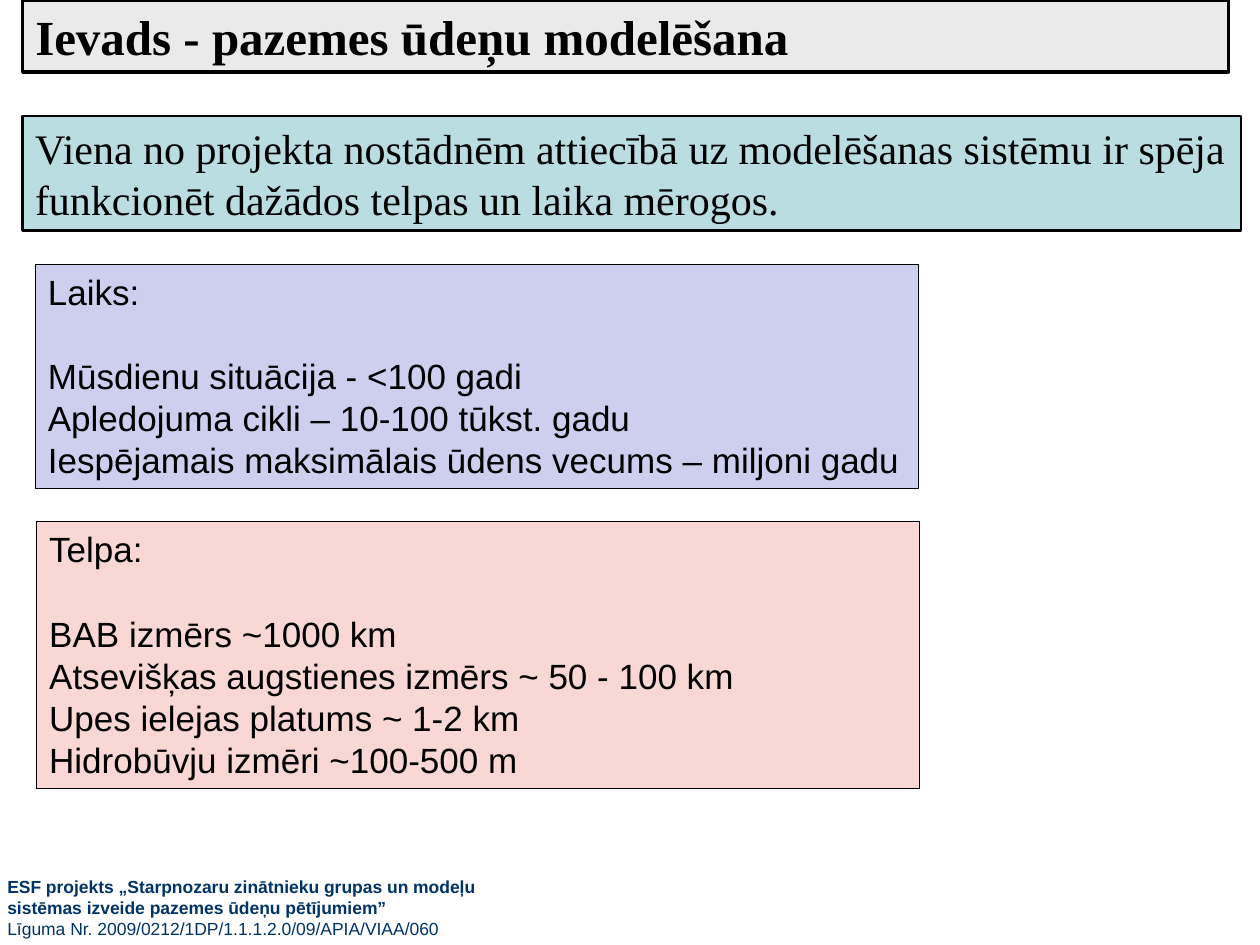
from lxml import etree
from pptx import Presentation
from pptx.dml.color import RGBColor
from pptx.enum.text import MSO_ANCHOR, MSO_AUTO_SIZE, PP_ALIGN
from pptx.oxml.ns import qn
from pptx.util import Pt

PX = 9144
SLIDE_SIZE = (1000, 750)
TOP, MIDDLE = MSO_ANCHOR.TOP, MSO_ANCHOR.MIDDLE
LEFT = PP_ALIGN.LEFT
NO_AUTOFIT = MSO_AUTO_SIZE.NONE

BLACK = RGBColor(0x00, 0x00, 0x00)
NAVY = RGBColor(0x00, 0x33, 0x66)
GREY = RGBColor(0xEA, 0xEA, 0xEA)
TEAL = RGBColor(0xBA, 0xDD, 0xE1)
LAVENDER = RGBColor(0xCE, 0xCE, 0xEF)
PINK = RGBColor(0xF8, 0xD7, 0xD4)

SERIF, SANS = "Times New Roman", "Arial"
TITLE_FORMAT = {"name": SERIF, "size": Pt(28), "bold": True}
INTRO_FORMAT = {"name": SERIF, "size": Pt(24), "bold": False}
LIST_FORMAT = {"name": SANS, "size": Pt(20), "bold": False}
FOOTER_FORMAT = {"name": SANS, "size": Pt(10), "bold": True}
HEADING_GAP = Pt(24)

TITLE = "Ievads - pazemes ūdeņu modelēšana"
INTRO = (
    "Viena no projekta nostādnēm attiecībā uz modelēšanas sistēmu ir spēja "
    "funkcionēt dažādos telpas un laika mērogos."
)
TIME_LINES = [
    "Laiks:",
    "Mūsdienu situācija - <100 gadi",
    "Apledojuma cikli – 10-100 tūkst. gadu",
    "Iespējamais maksimālais ūdens vecums – miljoni gadu",
]
SPACE_LINES = [
    "Telpa:",
    "BAB izmērs ~1000 km",
    "Atsevišķas augstienes izmērs ~ 50 - 100 km",
    "Upes ielejas platums ~ 1-2 km",
    "Hidrobūvju izmēri ~100-500 m",
]
FOOTER_LINES = [
    "ESF projekts „Starpnozaru zinātnieku grupas un modeļu",
    "sistēmas izveide pazemes ūdeņu pētījumiem”",
    "Līguma Nr. 2009/0212/1DP/1.1.1.2.0/09/APIA/VIAA/060",
]


def place(shape, box):
    """Move and size a shape to a px box of left, top, width, height."""
    for name, value in zip(("left", "top", "width", "height"), box):
        setattr(shape, name, value * PX)


def paint(shape, fill, line_width):
    """Give a shape a solid fill and a black outline."""
    shape.fill.solid()
    shape.fill.fore_color.rgb = fill
    shape.line.color.rgb = BLACK
    shape.line.width = Pt(line_width)


def write(shape, lines, font_format, color=BLACK, anchor=TOP):
    """Write one left-aligned, unbulleted paragraph per line."""
    frame = shape.text_frame
    frame.text = "\n".join(lines)
    frame.word_wrap = True
    frame.auto_size = NO_AUTOFIT
    frame.vertical_anchor = anchor
    for paragraph in frame.paragraphs:
        paragraph.alignment = LEFT
        paragraph.space_before = Pt(0)
        properties = paragraph._p.get_or_add_pPr()
        properties.set("marL", "0")
        properties.set("indent", "0")
        etree.SubElement(properties, qn("a:buNone"))
        for name, value in font_format.items():
            setattr(paragraph.font, name, value)
        paragraph.font.color.rgb = color


def add_title(slide, box):
    """Fill the title placeholder as a framed grey bar."""
    title = slide.shapes.title
    place(title, box)
    paint(title, GREY, 2)
    write(title, [TITLE], TITLE_FORMAT)


def add_intro(slide, box):
    """Add the framed introductory statement."""
    intro = slide.shapes.add_textbox(0, 0, 0, 0)
    place(intro, box)
    paint(intro, TEAL, 1.5)
    write(intro, [INTRO], INTRO_FORMAT, anchor=MIDDLE)


def add_scale_list(placeholder, box, lines, fill):
    """Fill a body placeholder with a heading and its scales."""
    place(placeholder, box)
    paint(placeholder, fill, 0.75)
    write(placeholder, lines, LIST_FORMAT)
    placeholder.text_frame.paragraphs[1].space_before = HEADING_GAP


def add_footer(slide, box):
    """Add the project name in bold with its contract number."""
    footer = slide.shapes.add_textbox(0, 0, 0, 0)
    place(footer, box)
    write(footer, FOOTER_LINES, FOOTER_FORMAT, NAVY)
    footer.text_frame.paragraphs[-1].font.bold = False


def main():
    """Build and save the presentation."""
    presentation = Presentation()
    presentation.slide_width, presentation.slide_height = (
        side * PX for side in SLIDE_SIZE
    )
    layout = presentation.slide_layouts.get_by_name("Two Content")
    slide = presentation.slides.add_slide(layout)
    add_footer(slide, (-4, 690, 866, 60))
    add_title(slide, (18, 0, 957, 57))
    add_intro(slide, (18, 92, 967, 91))
    add_scale_list(slide.placeholders[1], (28, 210, 701, 178), TIME_LINES, LAVENDER)
    add_scale_list(slide.placeholders[2], (29, 414, 701, 212), SPACE_LINES, PINK)
    presentation.save("out.pptx")


if __name__ == "__main__":
    main()
